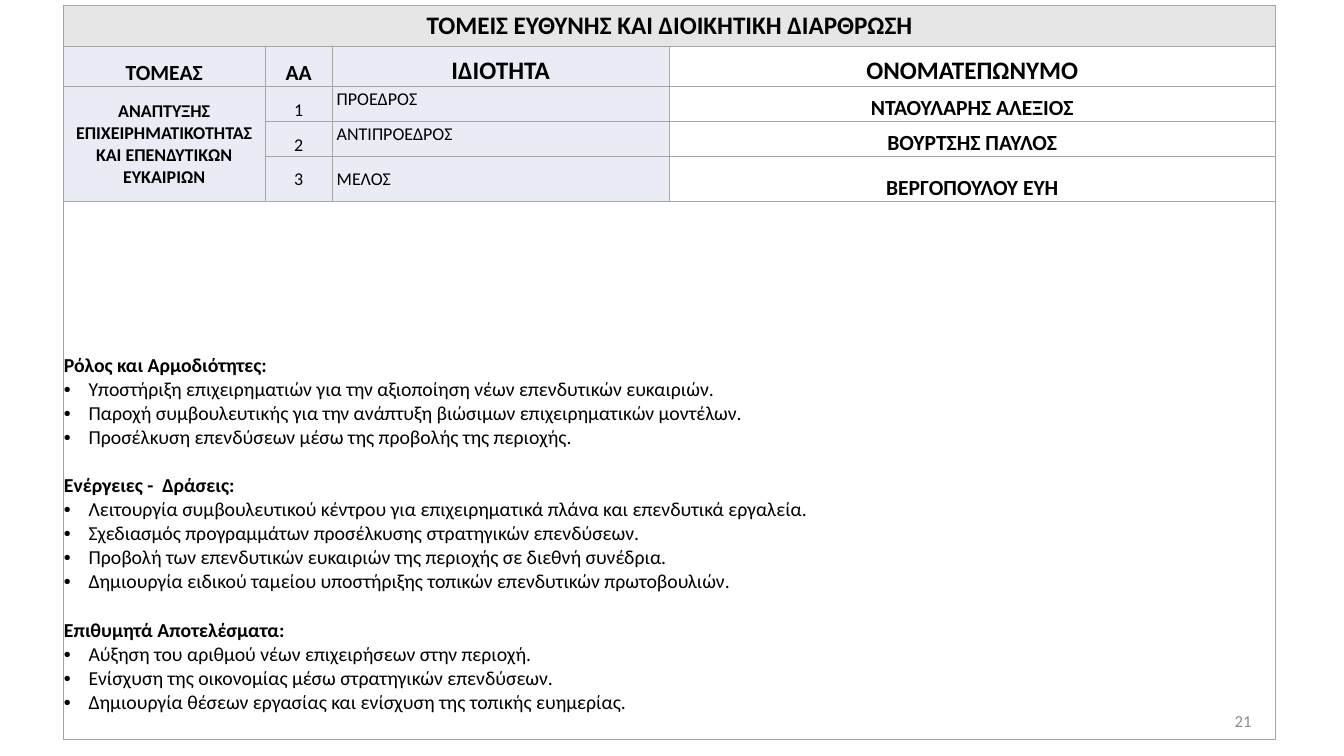
from lxml.etree import SubElement
from pptx import Presentation
from pptx.dml.color import RGBColor
from pptx.enum.text import MSO_ANCHOR, PP_ALIGN
from pptx.oxml.ns import qn
from pptx.util import Inches, Pt

COLORS = {
    "text": "000000",
    "number": "8C8C8C",
    "border": "A6A6A6",
    "title": "E7E6E6",
    "label": "E9EBF5",
    "plain": "FFFFFF",
}
COLUMN_WIDTHS = [3.12, 1.04, 5.21, 9.38]
ROW_HEIGHTS = [0.63, 0.63, 0.54, 0.54, 0.7, 8.31]
MEMBERS = [
    ("ΠΡΟΕΔΡΟΣ", "ΝΤΑΟΥΛΑΡΗΣ ΑΛΕΞΙΟΣ"),
    ("ΑΝΤΙΠΡΟΕΔΡΟΣ", "ΒΟΥΡΤΣΗΣ ΠΑΥΛΟΣ"),
    ("ΜΕΛΟΣ", "ΒΕΡΓΟΠΟΥΛΟΥ ΕΥΗ"),
]
SECTIONS = {
    "Ρόλος και Αρμοδιότητες:": [
        "Υποστήριξη επιχειρηματιών για την αξιοποίηση νέων επενδυτικών ευκαιριών.",
        "Παροχή συμβουλευτικής για την ανάπτυξη βιώσιμων επιχειρηματικών μοντέλων.",
        "Προσέλκυση επενδύσεων μέσω της προβολής της περιοχής.",
    ],
    "Ενέργειες -  Δράσεις:": [
        "Λειτουργία συμβουλευτικού κέντρου για επιχειρηματικά πλάνα και επενδυτικά εργαλεία.",
        "Σχεδιασμός προγραμμάτων προσέλκυσης στρατηγικών επενδύσεων.",
        "Προβολή των επενδυτικών ευκαιριών της περιοχής σε διεθνή συνέδρια.",
        "Δημιουργία ειδικού ταμείου υποστήριξης τοπικών επενδυτικών πρωτοβουλιών.",
    ],
    "Επιθυμητά Αποτελέσματα:": [
        "Αύξηση του αριθμού νέων επιχειρήσεων στην περιοχή.",
        "Ενίσχυση της οικονομίας μέσω στρατηγικών επενδύσεων.",
        "Δημιουργία θέσεων εργασίας και ενίσχυση της τοπικής ευημερίας.",
    ],
}


def write(paragraph, text, size=20, bold=False, color="text", align=PP_ALIGN.LEFT,
          line_spacing=None, before=0, after=0, bullet=False):
    run = paragraph.add_run()
    run.text = text
    run.font.name = "Calibri"
    run.font.size = Pt(size)
    run.font.bold = bold
    run.font.color.rgb = RGBColor.from_string(COLORS[color])
    paragraph.alignment = align
    paragraph.line_spacing = line_spacing
    paragraph.space_before = Pt(before)
    paragraph.space_after = Pt(after)
    if bullet:
        properties = paragraph._p.get_or_add_pPr()
        properties.set("marL", str(Inches(0.38)))
        properties.set("indent", str(-Inches(0.38)))
        SubElement(properties, qn("a:buFont"), typeface="Arial")
        SubElement(properties, qn("a:buChar"), char="•")


def set_margins(target, left, top, right, bottom):
    target.margin_left, target.margin_right = Inches(left), Inches(right)
    target.margin_top, target.margin_bottom = Inches(top), Inches(bottom)


class SlideBuilder:
    def __init__(self, slide):
        self.slide = slide
        self.border_width = Pt(1)

    def table(self, left, top, column_widths, row_heights):
        table = self.slide.shapes.add_table(
            len(row_heights), len(column_widths), Inches(left), Inches(top),
            Inches(sum(column_widths)), Inches(sum(row_heights))).table
        table.first_row = table.horz_banding = False
        for column, width in zip(table.columns, column_widths):
            column.width = Inches(width)
        for row, height in zip(table.rows, row_heights):
            row.height = Inches(height)
        for cell in table.iter_cells():
            self.borders(cell)
        return table

    def borders(self, cell):
        properties = cell._tc.get_or_add_tcPr()
        for side in ("lnL", "lnR", "lnT", "lnB"):
            line = SubElement(properties, qn(f"a:{side}"), w=str(self.border_width))
            fill = SubElement(line, qn("a:solidFill"))
            SubElement(fill, qn("a:srgbClr"), val=COLORS["border"])

    def cell(self, cell, fill, text=None, anchor=MSO_ANCHOR.BOTTOM,
             margins=(0.01, 0.01, 0.01, 0), **style):
        cell.fill.solid()
        cell.fill.fore_color.rgb = RGBColor.from_string(COLORS[fill])
        cell.vertical_anchor = anchor
        set_margins(cell, *margins)
        if text:
            write(cell.text_frame.paragraphs[0], text, **style)

    def sections(self, text_frame, sections):
        """Write bold headings, each followed by its bulleted lines."""
        paragraph = text_frame.paragraphs[0]
        for number, (heading, items) in enumerate(sections.items()):
            if number:
                paragraph = text_frame.add_paragraph()
            write(paragraph, heading, size=22, bold=True, before=27 if number else 0)
            for item in items:
                write(text_frame.add_paragraph(), item, size=22, bullet=True)

    def text_box(self, left, top, width, height, text, **style):
        box = self.slide.shapes.add_textbox(
            Inches(left), Inches(top), Inches(width), Inches(height))
        frame = box.text_frame
        frame.word_wrap = True
        frame.vertical_anchor = MSO_ANCHOR.MIDDLE
        set_margins(frame, 0, 0, 0, 0)
        write(frame.paragraphs[0], text, **style)


def main():
    presentation = Presentation()
    presentation.slide_width = Inches(20.79)
    presentation.slide_height = Inches(11.69)
    builder = SlideBuilder(presentation.slides.add_slide(presentation.slide_layouts[6]))
    table = builder.table(0.98, 0.08, COLUMN_WIDTHS, ROW_HEIGHTS)
    centered = {"align": PP_ALIGN.CENTER}
    strong = {"bold": True, **centered}

    table.cell(0, 0).merge(table.cell(0, 3))
    table.cell(2, 0).merge(table.cell(4, 0))
    table.cell(5, 0).merge(table.cell(5, 3))

    builder.cell(table.cell(0, 0), "title", "ΤΟΜΕΙΣ ΕΥΘΥΝΗΣ ΚΑΙ ΔΙΟΙΚΗΤΙΚΉ ΔΙΑΡΘΡΩΣΗ",
                 MSO_ANCHOR.MIDDLE, size=28, **strong)
    headings = [("ΤΟΜΕΑΣ", 24, "label"), ("ΑΑ", 24, "label"),
                ("ΙΔΙΟΤΗΤΑ", 28, "label"), ("ΟΝΟΜΑΤΕΠΩΝΥΜΟ", 28, "plain")]
    for column, (text, size, fill) in enumerate(headings):
        builder.cell(table.cell(1, column), fill, text, size=size, **strong)

    builder.cell(table.cell(2, 0), "label",
                 "ΑΝΑΠΤΥΞΗΣ ΕΠΙΧΕΙΡΗΜΑΤΙΚΟΤΗΤΑΣ ΚΑΙ ΕΠΕΝΔΥΤΙΚΩΝ ΕΥΚΑΙΡΙΩΝ",
                 MSO_ANCHOR.MIDDLE, **strong)
    for number, (role, name) in enumerate(MEMBERS, start=1):
        row = number + 1
        is_last = number == len(MEMBERS)
        builder.cell(table.cell(row, 1), "label", str(number),
                     MSO_ANCHOR.MIDDLE if is_last else MSO_ANCHOR.BOTTOM, **centered)
        builder.cell(table.cell(row, 2), "label", role,
                     MSO_ANCHOR.MIDDLE if is_last else MSO_ANCHOR.TOP,
                     (0.07, 0, 0.07, 0), line_spacing=1.07, after=8)
        builder.cell(table.cell(row, 3), "plain", name, size=24, **strong)

    duties = table.cell(5, 0)
    builder.cell(duties, "plain", margins=(0.01, 0.01, 0.01, 0.38))
    builder.sections(duties.text_frame, SECTIONS)

    builder.text_box(14.68, 10.84, 4.68, 0.62, "21", size=18.7, color="number",
                     align=PP_ALIGN.RIGHT)
    presentation.save("out.pptx")


if __name__ == "__main__":
    main()
